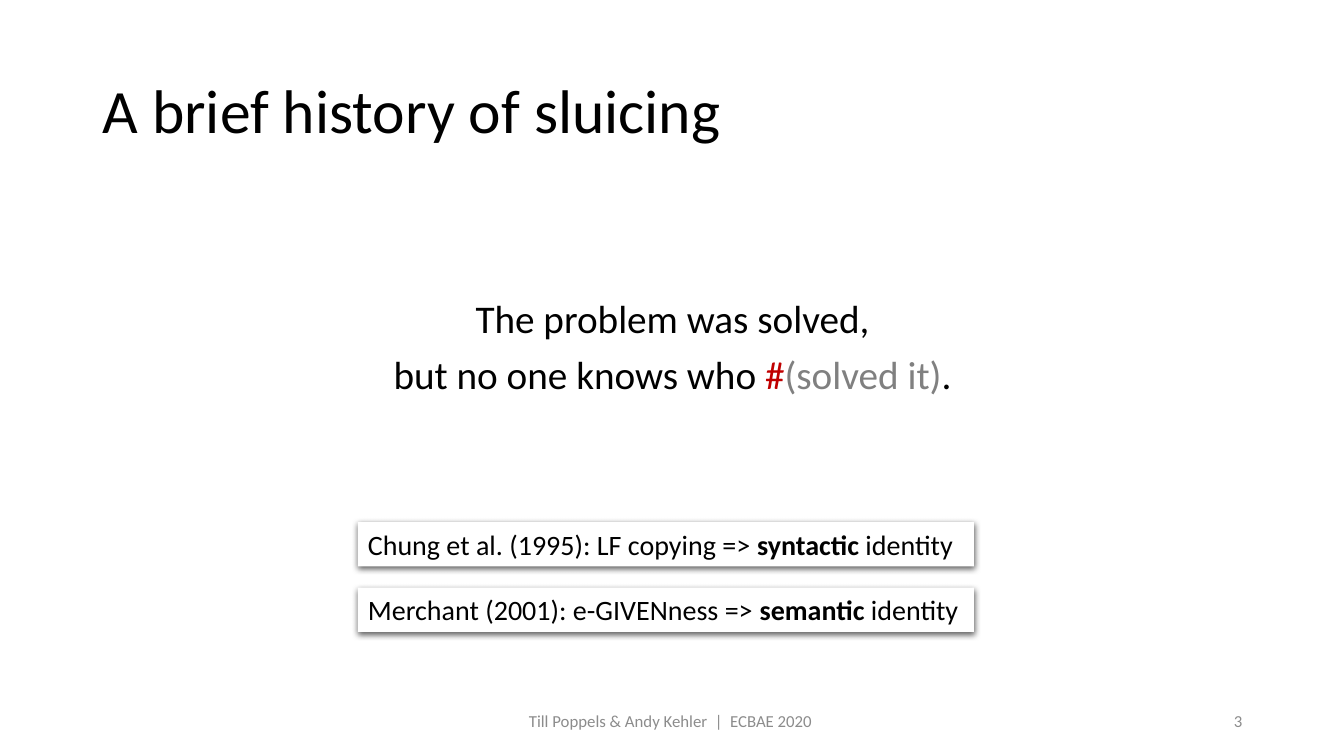
"""Build the slide on the history of sluicing."""
from lxml import etree
from pptx import Presentation
from pptx.dml.color import RGBColor as RGB
from pptx.enum.shapes import MSO_SHAPE as Shape
from pptx.enum.text import MSO_ANCHOR as Anchor, MSO_AUTO_SIZE as Fit, PP_ALIGN as Align
from pptx.oxml import parse_xml
from pptx.oxml.ns import nsdecls
from pptx.util import Inches, Pt

HUES = {"ink": "000000", "paper": "FFFFFF", "foot": "8C8C8C",
        "mark": "C00000", "dim": "808080"}
SHADE = (f'<a:effectLst {nsdecls("a")}><a:outerShdw blurRad="57150" dist="19050" '
         'dir="5400000" algn="ctr" rotWithShape="0"><a:srgbClr val="000000">'
         '<a:alpha val="63000"/></a:srgbClr></a:outerShdw></a:effectLst>')


def write(box, lines, size, anchor=Anchor.TOP, **style):
    """Fill a shape with lines made of (text, hue, bold) runs."""
    frame = box.text_frame
    frame.word_wrap = True
    frame.vertical_anchor = anchor
    for i, line in enumerate(lines):
        para = frame.paragraphs[0] if i == 0 else frame.add_paragraph()
        for name, value in style.items():
            setattr(para, name, value)
        for text, hue, bold in line:
            run = para.add_run()
            run.text = text
            font = {"name": "Calibri", "size": Pt(size), "bold": bold}
            for name, value in font.items():
                setattr(run.font, name, value)
            run.font.color.rgb = RGB.from_string(HUES[hue])


deck = Presentation()
deck.slide_width, deck.slide_height = Inches(13.33), Inches(7.5)
slide = deck.slides.add_slide(deck.slide_layouts[6])
shapes = slide.shapes

texts = [
    ((0.92, 0.4, 11.5, 1.45), [[("A brief history of sluicing", "ink", False)]], 44,
     {"anchor": Anchor.MIDDLE, "alignment": Align.LEFT, "line_spacing": 0.9}),
    ((9.42, 6.95, 3, 0.4), [[("3", "foot", False)]], 12,
     {"anchor": Anchor.MIDDLE, "alignment": Align.RIGHT}),
    ((4.42, 6.95, 4.5, 0.4),
     [[("Till Poppels & Andy Kehler  |  ECBAE 2020 ", "foot", False)]], 12,
     {"anchor": Anchor.MIDDLE, "alignment": Align.CENTER}),
    ((0.92, 2.92, 11.5, 1.3),
     [[("The problem was solved,", "ink", False)],
      [("but no one knows who ", "ink", False), ("#", "mark", False),
       ("(solved it)", "dim", False), (".", "ink", False)]], 28,
     {"alignment": Align.CENTER, "line_spacing": 0.9, "space_before": Pt(10)}),
]
for place, lines, size, style in texts:
    box = shapes.add_textbox(*map(Inches, place))
    write(box, lines, size, **style)

claims = [("Chung et al. (1995): LF copying => ", "syntactic"),
          ("Merchant (2001): e-GIVENness => ", "semantic")]
for i, (claim, kind) in enumerate(claims):
    card = shapes.add_shape(Shape.RECTANGLE, Inches(3.55), Inches(5.18 + 0.65 * i),
                            Inches(6.11), Inches(0.44))
    card.fill.solid()
    card.fill.fore_color.rgb = RGB.from_string(HUES["paper"])
    card.line.fill.background()
    card._element.spPr.append(parse_xml(SHADE))
    write(card, [[(claim, "ink", False), (kind, "ink", True),
                  (" identity", "ink", False)]], 20, alignment=Align.LEFT)
    card.text_frame.auto_size = Fit.SHAPE_TO_FIT_TEXT

deck.save("out.pptx")
